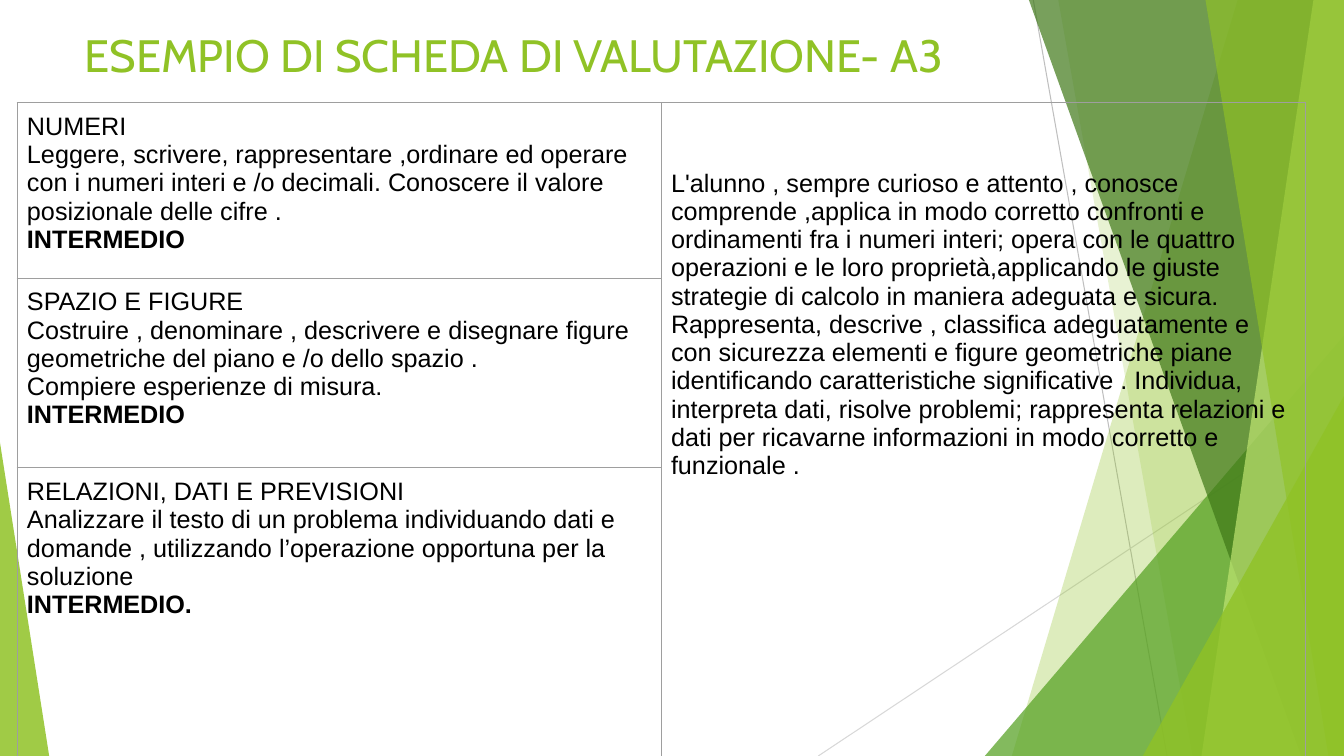
import lxml.etree
import pptx
import pptx.dml.color
import pptx.enum.shapes
import pptx.enum.text
import pptx.oxml.ns
import pptx.util

Cm = pptx.util.Cm
Pt = pptx.util.Pt
RGBColor = pptx.dml.color.RGBColor
qn = pptx.oxml.ns.qn

WHITE = RGBColor(0xFF, 0xFF, 0xFF)
BLACK = RGBColor(0x00, 0x00, 0x00)
LIME = RGBColor(0x90, 0xC2, 0x26)
GREEN = RGBColor(0x54, 0xA0, 0x21)
DARK_GREEN = RGBColor(0x3F, 0x78, 0x18)
PALE_GREEN = RGBColor(0xBF, 0xE4, 0x71)
GREY = RGBColor(0xBF, 0xBF, 0xBF)
LIGHT_GREY = RGBColor(0xD8, 0xD8, 0xD8)
BORDER_GREY = RGBColor(0x9E, 0x9E, 0x9E)

WIDTH, HEIGHT = 33.87, 19.05

TITLE = "ESEMPIO DI SCHEDA DI VALUTAZIONE- A3"
SUBJECTS = [
    (["NUMERI",
      "Leggere, scrivere, rappresentare ,ordinare ed operare con i numeri interi "
      "e /o decimali. Conoscere il valore posizionale delle cifre ."],
     "INTERMEDIO"),
    (["SPAZIO E FIGURE",
      "Costruire , denominare , descrivere e disegnare figure geometriche del "
      "piano e /o dello spazio .",
      "Compiere esperienze di misura."],
     "INTERMEDIO"),
    (["RELAZIONI, DATI E PREVISIONI",
      "Analizzare il testo di un problema individuando dati e domande , "
      "utilizzando l’operazione opportuna per la soluzione"],
     "INTERMEDIO."),
]
JUDGEMENT = [
    "L'alunno , sempre curioso e attento , conosce comprende ,applica in modo "
    "corretto confronti e ordinamenti fra i numeri interi; opera con le quattro "
    "operazioni e le loro proprietà,applicando le giuste",
    "strategie di calcolo in maniera adeguata e sicura. Rappresenta, descrive , "
    "classifica adeguatamente e",
    "con sicurezza elementi e figure geometriche piane identificando "
    "caratteristiche significative . Individua, interpreta dati, risolve "
    "problemi; rappresenta relazioni e dati per ricavarne informazioni in modo "
    "corretto e",
    "funzionale .",
]


def write_paragraph(text_frame, text, *, size=18, font="Arial", color=BLACK, bold=False):
    """Write text in the first paragraph if it is free, else in a new one."""
    paragraph = text_frame.paragraphs[0]
    if paragraph.runs:
        paragraph = text_frame.add_paragraph()
    run = paragraph.add_run()
    run.text = text
    run.font.size = Pt(size)
    run.font.name = font
    run.font.color.rgb = color
    run.font.bold = bold


def paint(shape, color, opacity):
    """Fill a shape with a translucent colour, without outline or shadow."""
    shape.shadow.inherit = False
    shape.line.fill.background()
    shape.fill.solid()
    shape.fill.fore_color.rgb = color
    color_element = shape.fill._xPr.find(qn("a:solidFill"))[0]
    lxml.etree.SubElement(color_element, qn("a:alpha"), val=str(opacity * 1000))


def add_thin_line(slide, start, end, color):
    """Draw a thin straight line between two points in centimetres."""
    line = slide.shapes.add_connector(
        pptx.enum.shapes.MSO_CONNECTOR.STRAIGHT,
        *(Cm(value) for value in (*start, *end)))
    line.line.color.rgb = color
    line.line.width = Pt(0.75)
    lxml.etree.SubElement(line._element.spPr, qn("a:effectLst"))


def add_shard(slide, box, top_x, bottom_x, color, opacity):
    """Draw a full-height shard from a slanted left edge to the box's right side."""
    left, top, width, height = box
    right, bottom = left + width, top + height
    builder = slide.shapes.build_freeform(Cm(left + top_x), Cm(top))
    corners = [(right, top), (right, bottom), (left + bottom_x, bottom)]
    builder.add_line_segments([(Cm(x), Cm(y)) for x, y in corners])
    paint(builder.convert_to_shape(), color, opacity)


def add_corner(slide, box, apex, color, opacity):
    """Draw a right triangle whose apex lies at the given share of its width."""
    triangle = slide.shapes.add_shape(
        pptx.enum.shapes.MSO_SHAPE.ISOSCELES_TRIANGLE, *(Cm(value) for value in box))
    triangle.adjustments[0] = apex
    paint(triangle, color, opacity)


def add_decoration(slide, box):
    """Draw the lines and green facets within the box."""
    left, top, width, height = box
    right, bottom = left + width, top + height

    def add_right_corner(x, y, color, opacity):
        """Draw a triangle that ends in the lower right corner of the box."""
        add_corner(slide, (left + x, top + y, width - x, height - y), 1, color, opacity)

    add_thin_line(slide, (left + 26.04, top), (left + 29.41, bottom), GREY)
    add_thin_line(slide, (right, top + 10.24), (left + 20.62, bottom), LIGHT_GREY)
    add_shard(slide, box, 31.19, 25.5, LIME, 30)
    add_shard(slide, box, 26.67, 30.05, LIME, 20)
    add_right_corner(24.82, 8.46, GREEN, 72)
    add_shard(slide, box, 25.93, 32.79, DARK_GREEN, 70)
    add_shard(slide, box, 33.1, 30.28, PALE_GREEN, 70)
    add_shard(slide, box, 30.38, 33.48, LIME, 65)
    add_right_corner(28.8, 9.98, LIME, 80)
    add_corner(slide, (left, top + 11.15, 1.24, height - 11.15), 0, LIME, 85)


def add_title(slide, box):
    """Place the slide title in the box."""
    text_frame = slide.shapes.add_textbox(*(Cm(value) for value in box)).text_frame
    text_frame.word_wrap = True
    text_frame.vertical_anchor = pptx.enum.text.MSO_ANCHOR.TOP
    write_paragraph(text_frame, TITLE, size=32.4, font="Cabin", color=LIME)


def format_cell(cell):
    """Give a cell even margins, no fill and thin grey borders."""
    cell.margin_left = cell.margin_right = cell.margin_top = cell.margin_bottom = Cm(0.25)
    cell.fill.background()
    properties = cell._tc.get_or_add_tcPr()
    for position, side in enumerate(("lnL", "lnR", "lnT", "lnB")):
        border = lxml.etree.Element(qn(f"a:{side}"), w=str(Pt(0.75)))
        fill = lxml.etree.SubElement(border, qn("a:solidFill"))
        lxml.etree.SubElement(fill, qn("a:srgbClr"), val=str(BORDER_GREY))
        properties.insert(position, border)


def add_assessment(slide, box):
    """Build the table of subjects with the overall judgement beside them."""
    table = slide.shapes.add_table(
        len(SUBJECTS), 2, *(Cm(value) for value in box)).table
    table.first_row = table.horz_banding = False
    for row, height in zip(table.rows, (4.42, 4.78, box[3] - 9.2)):
        row.height = Cm(height)
    for cell in table.iter_cells():
        format_cell(cell)
    for row_index, (lines, level) in enumerate(SUBJECTS):
        text_frame = table.cell(row_index, 0).text_frame
        for line in lines:
            write_paragraph(text_frame, line)
        write_paragraph(text_frame, level, bold=True)
    judgement_cell = table.cell(0, 1)
    judgement_cell.merge(table.cell(len(SUBJECTS) - 1, 1))
    judgement_cell.margin_top = Cm(1.68)
    for line in JUDGEMENT:
        write_paragraph(judgement_cell.text_frame, line)


def main():
    """Build and save the presentation."""
    presentation = pptx.Presentation()
    presentation.slide_width = Cm(WIDTH)
    presentation.slide_height = Cm(HEIGHT)
    slide = presentation.slides.add_slide(presentation.slide_layouts[6])
    slide.background.fill.solid()
    slide.background.fill.fore_color.rgb = WHITE
    add_decoration(slide, (0, 0, WIDTH, HEIGHT))
    add_title(slide, (1.88, 0.56, 23.88, 1.14))
    add_assessment(slide, (0.43, 2.59, 32.46, 16.5))
    presentation.save("out.pptx")


if __name__ == "__main__":
    main()
